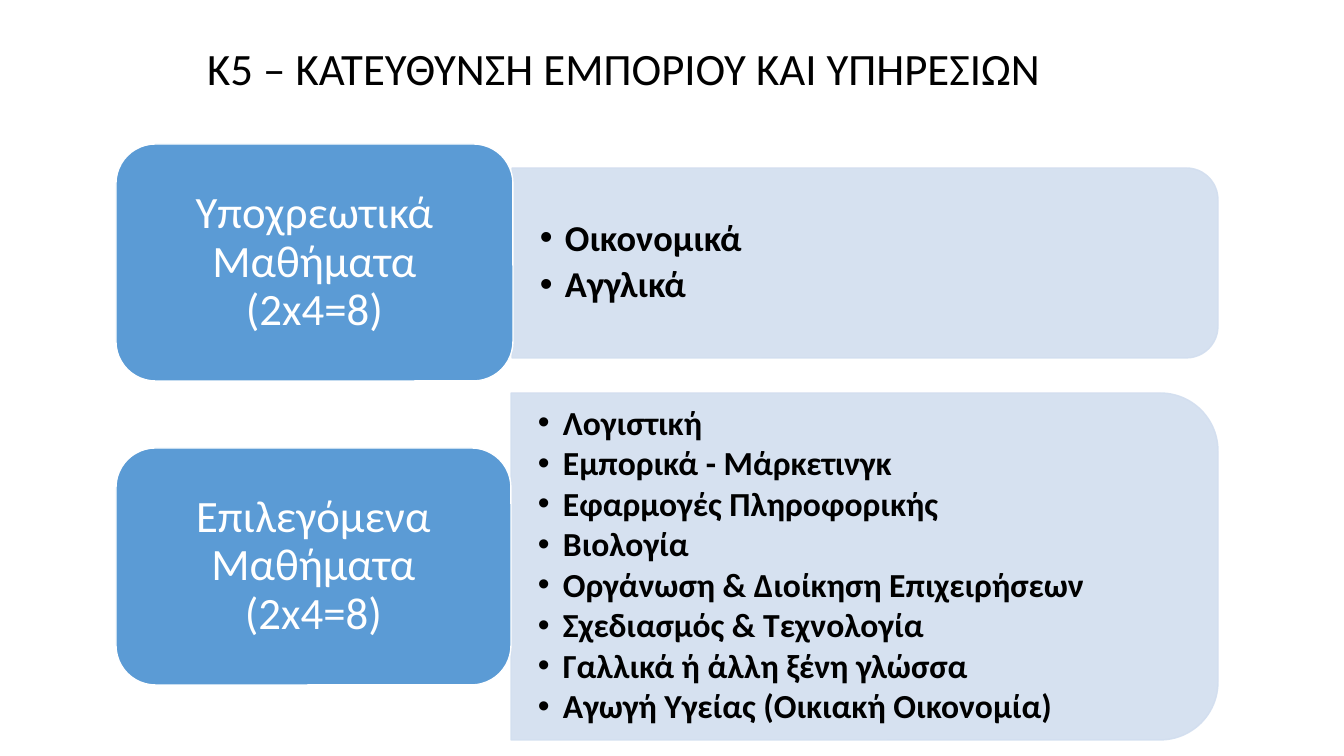
from lxml import etree
from pptx import Presentation
from pptx.dml.color import RGBColor
from pptx.enum.shapes import MSO_SHAPE
from pptx.enum.text import MSO_ANCHOR, MSO_AUTO_SIZE, PP_ALIGN
from pptx.oxml.ns import qn
from pptx.util import Emu, Pt

PX = 914400 / 100.8
FONT = "Calibri"
BLACK = RGBColor(0x00, 0x00, 0x00)
WHITE = RGBColor(0xFF, 0xFF, 0xFF)
BLUE = RGBColor(0x5B, 0x9B, 0xD5)
PALE = RGBColor(0xD2, 0xDE, 0xEF)
CENTER, LEFT = PP_ALIGN.CENTER, PP_ALIGN.LEFT
MIDDLE = MSO_ANCHOR.MIDDLE
NO_FIT = MSO_AUTO_SIZE.NONE
ROUNDED, ROUNDED_TOP = MSO_SHAPE.ROUNDED_RECTANGLE, MSO_SHAPE.ROUND_2_SAME_RECTANGLE

TITLE = "Κ5 – ΚΑΤΕΥΘΥΝΣΗ ΕΜΠΟΡΙΟΥ ΚΑΙ ΥΠΗΡΕΣΙΩΝ"
REQUIRED = ["Οικονομικά", "Αγγλικά"]
ELECTIVE = [
    "Λογιστική",
    "Εμπορικά - Μάρκετινγκ",
    "Εφαρμογές Πληροφορικής",
    "Βιολογία",
    "Οργάνωση & Διοίκηση Επιχειρήσεων",
    "Σχεδιασμός & Τεχνολογία",
    "Γαλλικά ή άλλη ξένη γλώσσα",
    "Αγωγή Υγείας (Οικιακή Οικονομία)",
]


def px(n):
    return Emu(round(n * PX))


def set_bullet(p, indent):
    pPr = p._p.get_or_add_pPr()
    pPr.set("marL", str(px(indent)))
    pPr.set("indent", str(-px(indent)))
    etree.SubElement(pPr, qn("a:buChar")).set("char", "•")


def set_alpha(fill_parent, percent):
    for color in fill_parent.iter(qn("a:srgbClr")):
        etree.SubElement(color, qn("a:alpha")).set("val", str(percent * 1000))


def write(sp, lines, size, color=BLACK, bold=False, align=CENTER,
          inset=(10, 5), after=0, bullet=0):
    tf = sp.text_frame
    tf.word_wrap = True
    tf.auto_size = NO_FIT
    tf.vertical_anchor = MIDDLE
    tf.margin_left = tf.margin_right = px(inset[0])
    tf.margin_top = tf.margin_bottom = px(inset[1])
    for i, line in enumerate(lines):
        p = tf.add_paragraph() if i else tf.paragraphs[0]
        p.alignment = align
        p.line_spacing = 0.9
        p.space_before = Pt(0)
        p.space_after = Pt(after)
        if bullet:
            set_bullet(p, bullet)
        r = p.add_run()
        r.text = line
        r.font.name, r.font.size, r.font.bold = FONT, Pt(size), bold
        r.font.color.rgb = color


class Deck:
    def __init__(self):
        self.prs = Presentation()
        self.prs.slide_width, self.prs.slide_height = px(1344), px(756)
        self.s = self.prs.slides.add_slide(self.prs.slide_layouts[3])

    def place(self, idx, box, lines, size, **fmt):
        """Move a placeholder to box, in front of everything so far, and fill it."""
        sp = self.s.placeholders[idx]
        sp.left, sp.top, sp.width, sp.height = map(px, box)
        sp.element.getparent().append(sp.element)
        write(sp, lines, size, **fmt)

    def shape(self, kind, box, fill, line):
        sp = self.s.shapes.add_shape(kind, *map(px, box))
        sp.shadow.inherit = False
        sp.fill.solid()
        sp.fill.fore_color.rgb = fill
        sp.line.color.rgb = line
        sp.line.width = Pt(1)
        return sp

    def panel(self, x, y, w, h):
        """Pale panel with its right corners rounded, by a quarter turn."""
        box = (x + (w - h) / 2, y + (h - w) / 2, h, w)
        sp = self.shape(ROUNDED_TOP, box, PALE, PALE)
        sp.rotation = 90
        set_alpha(sp.element.spPr, 90)

    def label(self, box, text):
        write(self.shape(ROUNDED, box, BLUE, WHITE), [text], 32,
              color=WHITE, inset=(13, 7))

    def bullets(self, idx, box, lines, size, after):
        self.place(idx, box, lines, size, bold=True, align=LEFT,
                   inset=(27, 14), after=after, bullet=25)


def main():
    deck = Deck()
    deck.place(0, (30, 16, 1188, 110), [TITLE], 32)

    deck.panel(512, 168, 706, 190)
    deck.bullets(1, (513, 177, 697, 171), REQUIRED, 26, 5)
    deck.label((116, 144, 397, 237), "Υποχρεωτικά Μαθήματα (2x4=8)")

    deck.panel(511, 393, 707, 347)
    deck.bullets(2, (511, 410, 690, 312), ELECTIVE, 24, 3)
    deck.label((116, 448, 395, 237), "Επιλεγόμενα Μαθήματα (2x4=8)")

    deck.prs.save("out.pptx")


if __name__ == "__main__":
    main()
